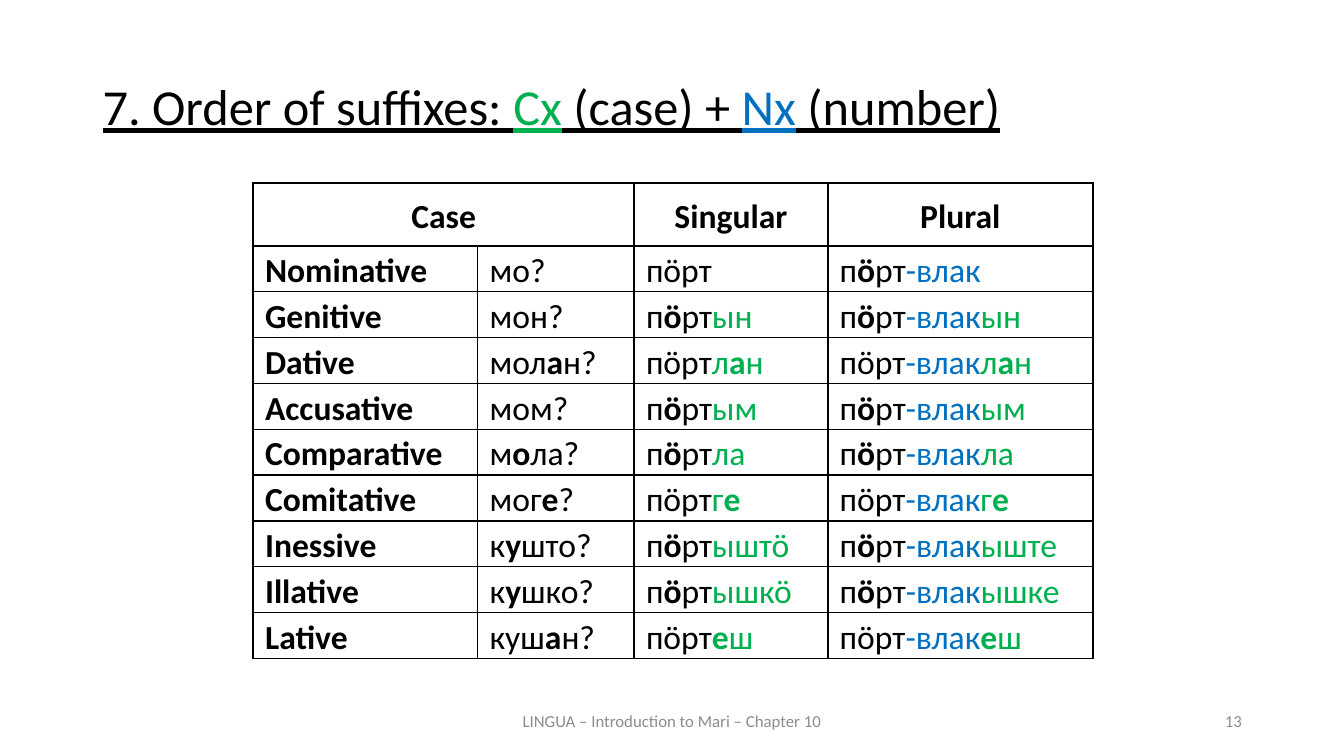
from dataclasses import dataclass

from lxml import etree
from pptx import Presentation
from pptx.dml.color import RGBColor
from pptx.enum.text import MSO_ANCHOR, PP_ALIGN
from pptx.oxml.ns import qn
from pptx.util import Cm, Pt

LEFT, MID, RIGHT, FULL = PP_ALIGN.LEFT, PP_ALIGN.CENTER, PP_ALIGN.RIGHT, PP_ALIGN.JUSTIFY
TOP, CENTRE = MSO_ANCHOR.TOP, MSO_ANCHOR.MIDDLE


@dataclass(frozen=True)
class Theme:
    font: str = "Calibri"
    ink: str = "000000"
    case: str = "00B050"
    num: str = "0070C0"
    grey: str = "8C8C8C"
    title: int = 36
    cell: int = 24
    foot: int = 12
    thin: float = 1
    thick: float = 1.5


T = Theme()

# Content: letters between asterisks are stressed and set in bold
TITLE = [("7. Order of suffixes: ", T.ink), ("Cx", T.case), (" (case) + ", T.ink),
         ("Nx", T.num), (" (number)", T.ink)]
HEADS = {0: "Case", 2: "Singular", 3: "Plural"}
PLURAL = "-влак"
# Case, question, singular stem and ending, plural stem and ending
CASES = [
    ("Nominative", "мо?", "пӧрт", "", "п*ӧ*рт", ""),
    ("Genitive", "мон?", "п*ӧ*рт", "ын", "п*ӧ*рт", "ын"),
    ("Dative", "мол*а*н?", "пӧрт", "л*а*н", "пӧрт", "л*а*н"),
    ("Accusative", "мом?", "п*ӧ*рт", "ым", "п*ӧ*рт", "ым"),
    ("Comparative", "м*о*ла?", "п*ӧ*рт", "ла", "п*ӧ*рт", "ла"),
    ("Comitative", "мог*е*?", "пӧрт", "г*е*", "пӧрт", "г*е*"),
    ("Inessive", "к*у*што?", "п*ӧ*рт", "ыштӧ", "п*ӧ*рт", "ыште"),
    ("Illative", "к*у*шко?", "п*ӧ*рт", "ышкӧ", "п*ӧ*рт", "ышке"),
    ("Lative", "куш*а*н?", "пӧрт", "*е*ш", "пӧрт", "*е*ш"),
]
# Text, left, width, alignment
FOOT = [("LINGUA – Introduction to Mari – Chapter 10", 11.22, 11.43, MID),
        ("13", 23.93, 7.62, RIGHT)]
COLS = [5.66, 3.94, 4.88, 6.68]
HEAD_H, ROW_H = 1.57, 1.15


def write(para, parts, size, align, under=None):
    """Add (text, colour) parts, switching bold at each asterisk."""
    para.alignment = align
    for text, tint in parts:
        for i, bit in enumerate(text.split("*")):
            if bit:
                run = para.add_run()
                run.text = bit
                font = run.font
                font.name, font.size = T.font, Pt(size)
                font.bold, font.underline = i % 2 == 1, under
                font.color.rgb = RGBColor.from_string(tint)


def border(cell, widths):
    props = cell._tc.get_or_add_tcPr()
    for side, width in zip("LRTB", widths):
        line = etree.SubElement(props, qn(f"a:ln{side}"), w=str(Pt(width)))
        fill = etree.SubElement(line, qn("a:solidFill"))
        etree.SubElement(fill, qn("a:srgbClr"), val=T.ink)


def fill_cell(cell, parts, row, col):
    head = row == 0
    write(cell.text_frame.paragraphs[0], parts, T.cell, MID if head else FULL)
    cell.text_frame.paragraphs[0].line_spacing = 1.07
    cell.vertical_anchor = CENTRE if head else TOP
    cell.margin_left = cell.margin_right = Cm(0.3)
    cell.margin_top, cell.margin_bottom = Cm(0.05), Cm(0)
    # Heavy frame and column rules, light rules inside the case list
    border(cell, (T.thin if col == 1 and not head else T.thick,
                  T.thin if col == 0 and not head else T.thick,
                  T.thick if row < 2 else T.thin,
                  T.thick if row in (0, len(CASES)) else T.thin))
    cell.fill.background()


def add_cases(slide):
    rows = len(CASES) + 1
    shape = slide.shapes.add_table(rows, len(COLS), Cm(6.38), Cm(4.62), Cm(sum(COLS)),
                                   Cm(HEAD_H + ROW_H * len(CASES)))
    table = shape.table
    table.first_row = table.horz_banding = False
    for col, width in zip(table.columns, COLS):
        col.width = Cm(width)
    for i, row in enumerate(table.rows):
        row.height = Cm(ROW_H if i else HEAD_H)
    table.cell(0, 0).merge(table.cell(0, 1))
    for col in range(len(COLS)):
        head = HEADS.get(col)
        fill_cell(table.cell(0, col), [(f"*{head}*", T.ink)] if head else [], 0, col)
    for i, (name, ask, one, end, many, tail) in enumerate(CASES, 1):
        line = [[(f"*{name}*", T.ink)],
                [(ask, T.ink)],
                [(one, T.ink), (end, T.case)],
                [(many, T.ink), (PLURAL, T.num), (tail, T.case)]]
        for col, parts in enumerate(line):
            fill_cell(table.cell(i, col), parts, i, col)


def main():
    deck = Presentation()
    deck.slide_width, deck.slide_height = Cm(33.87), Cm(19.05)
    slide = deck.slides.add_slide(deck.slide_layouts[5])

    # Title
    title = slide.shapes.title
    title.left, title.top, title.width, title.height = Cm(2.33), Cm(1.93), Cm(29.21), Cm(1.73)
    title.text_frame.vertical_anchor = TOP
    para = title.text_frame.paragraphs[0]
    para.line_spacing = 0.9
    write(para, TITLE, T.title, LEFT, True)

    # Case table
    add_cases(slide)

    # Footer and page number
    for text, left, width, align in FOOT:
        box = slide.shapes.add_textbox(Cm(left), Cm(17.66), Cm(width), Cm(1.01))
        box.text_frame.word_wrap = True
        box.text_frame.vertical_anchor = CENTRE
        write(box.text_frame.paragraphs[0], [(text, T.grey)], T.foot, align)

    deck.save("out.pptx")


if __name__ == "__main__":
    main()
